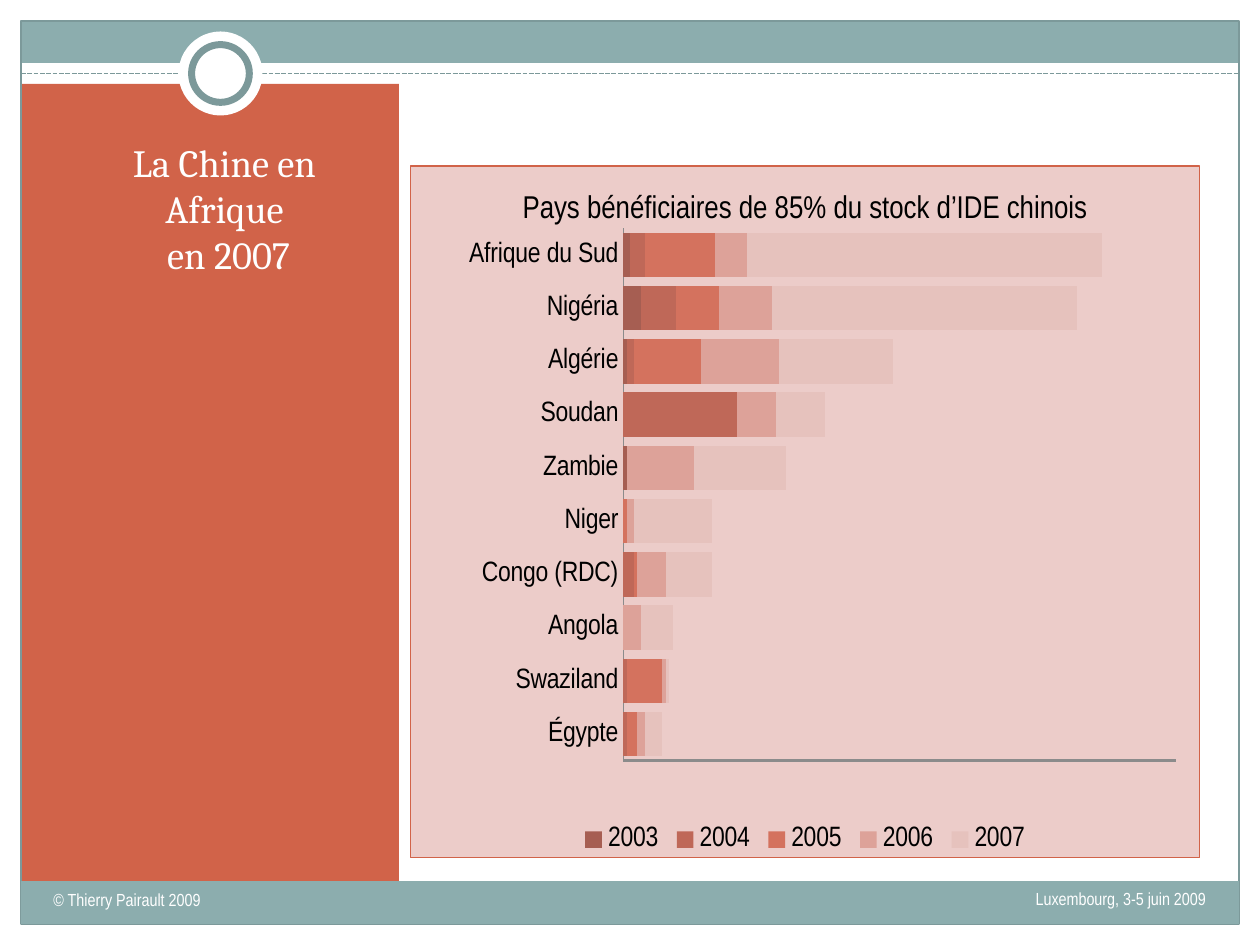
from dataclasses import dataclass

from pptx import Presentation
from pptx.chart.data import CategoryChartData
from pptx.dml.color import RGBColor
from pptx.enum.chart import XL_CHART_TYPE, XL_LEGEND_POSITION, XL_TICK_LABEL_POSITION, XL_TICK_MARK
from pptx.enum.dml import MSO_LINE
from pptx.enum.shapes import MSO_CONNECTOR, MSO_SHAPE
from pptx.enum.text import MSO_ANCHOR, PP_ALIGN
from pptx.oxml import parse_xml
from pptx.oxml.ns import nsdecls, qn
from pptx.util import Pt


@dataclass(frozen=True)
class Theme:
    white: str = "FFFFFF"
    black: str = "000000"
    teal: str = "8CADAE"
    edge: str = "7C999A"
    rust: str = "D16349"
    pink: str = "ECCCC9"
    axis: str = "8B8B8B"
    shades: tuple = ("A65E52", "BF6858", "D4725E", "DDA299", "E6C2BD")
    serif: str = "Cambria"
    sans: str = "Arial Narrow"
    head: int = 22
    title: int = 18
    label: int = 16
    foot: int = 10


THEME = Theme()

LANDS = ["Égypte", "Swaziland", "Angola", "Congo (RDC)", "Niger",
         "Zambie", "Soudan", "Algérie", "Nigéria", "Afrique du Sud"]
STOCK = {
    "2003": [0, 0, 0, 0, 0, 1, 0, 1, 5, 2],
    "2004": [1, 1, 0, 3, 0, 0, 32, 2, 10, 4],
    "2005": [3, 10, 0, 1, 1, 0, 0, 19, 12, 20],
    "2006": [2, 1, 5, 8, 2, 19, 11, 22, 15, 9],
    "2007": [5, 1, 9, 13, 22, 26, 14, 32, 86, 100],
}


def rgb(color):
    return RGBColor.from_string(color)


def style(font, size, color, name):
    font.size, font.name, font.bold = Pt(size), name, False
    font.color.rgb = rgb(color)


def add_form(slide, kind, box, fill=None, line=None, width=0.75):
    form = slide.shapes.add_shape(kind, *map(Pt, box))
    form.shadow.inherit = False
    if fill:
        form.fill.solid()
        form.fill.fore_color.rgb = rgb(fill)
    else:
        form.fill.background()
    if line:
        form.line.color.rgb = rgb(line)
        form.line.width = Pt(width)
    else:
        form.line.fill.background()


def add_disc(slide, x, y, size, **look):
    box = (x - size / 2, y - size / 2, size, size)
    add_form(slide, MSO_SHAPE.OVAL, box, THEME.white, **look)


def add_dash(slide, left, right, y):
    dash = slide.shapes.add_connector(
        MSO_CONNECTOR.STRAIGHT, Pt(left), Pt(y), Pt(right), Pt(y))
    dash.line.color.rgb = rgb(THEME.edge)
    dash.line.width = Pt(0.9)
    dash.line.dash_style = MSO_LINE.SQUARE_DOT
    dash._element.spPr.append(parse_xml(f"<a:effectLst {nsdecls('a')}/>"))


def add_text(slide, box, text, size, name, align, anchor=MSO_ANCHOR.TOP):
    frame = slide.shapes.add_textbox(*map(Pt, box)).text_frame
    frame.word_wrap = True
    frame.vertical_anchor = anchor
    para = frame.paragraphs[0]
    para.text = text
    para.alignment = align
    style(para.font, size, THEME.white, name)


def set_frame(chart):
    space = chart._chartSpace
    space.find(qn("c:chart")).addnext(parse_xml(
        f'<c:spPr {nsdecls("c", "a")}>'
        f'<a:solidFill><a:srgbClr val="{THEME.pink}"/></a:solidFill>'
        f'<a:ln w="{Pt(0.75)}"><a:solidFill><a:srgbClr val="{THEME.rust}"/>'
        '</a:solidFill></a:ln></c:spPr>'))


def set_plot(chart, x, y, w, h):
    area = chart._chartSpace.find(qn("c:chart")).find(qn("c:plotArea"))
    for old in area.findall(qn("c:layout")):
        area.remove(old)
    sizes = "".join(f'<c:{tag} val="{val}"/>' for tag, val in zip("xywh", (x, y, w, h)))
    area.insert(0, parse_xml(
        f'<c:layout {nsdecls("c")}><c:manualLayout>'
        '<c:layoutTarget val="inner"/><c:xMode val="edge"/><c:yMode val="edge"/>'
        f'{sizes}</c:manualLayout></c:layout>'))


def set_axis(axis, width):
    axis.has_major_gridlines = False
    axis.major_tick_mark = axis.minor_tick_mark = XL_TICK_MARK.NONE
    axis.format.line.color.rgb = rgb(THEME.axis)
    axis.format.line.width = Pt(width)
    style(axis.tick_labels.font, THEME.label, THEME.black, THEME.sans)


def add_bars(slide, box):
    data = CategoryChartData(number_format="#,##0")
    data.categories = LANDS
    for year, vals in STOCK.items():
        data.add_series(year, vals)
    chart = slide.shapes.add_chart(XL_CHART_TYPE.BAR_STACKED, *map(Pt, box), data).chart
    style(chart.font, THEME.foot, THEME.black, THEME.serif)

    chart.has_title = True
    para = chart.chart_title.text_frame.paragraphs[0]
    para.text = "Pays bénéficiaires de 85% du stock d’IDE chinois"
    style(para.font, THEME.title, THEME.black, THEME.sans)

    plot = chart.plots[0]
    plot.gap_width, plot.overlap = 20, 100
    plot.vary_by_categories = False
    for bar, shade in zip(plot.series, THEME.shades):
        bar.format.fill.solid()
        bar.format.fill.fore_color.rgb = rgb(shade)

    set_axis(chart.category_axis, 0.75)
    scale = chart.value_axis
    set_axis(scale, 1.5)
    scale.minimum_scale, scale.maximum_scale, scale.major_unit = 0, 156, 22
    scale.tick_label_position = XL_TICK_LABEL_POSITION.NONE

    chart.has_legend = True
    chart.legend.position = XL_LEGEND_POSITION.BOTTOM
    chart.legend.include_in_layout = False
    style(chart.legend.font, THEME.label, THEME.black, THEME.sans)
    set_plot(chart, 0.27, 0.09, 0.7, 0.77)
    set_frame(chart)


def main():
    deck = Presentation()
    deck.slide_width, deck.slide_height = Pt(720), Pt(540)
    slide = deck.slides.add_slide(deck.slide_layouts[6])
    rect = MSO_SHAPE.RECTANGLE

    add_form(slide, rect, (12, 12, 696, 24), THEME.teal)
    add_form(slide, rect, (12, 48, 216, 462), THEME.rust)
    add_form(slide, rect, (12, 12, 696, 516), line=THEME.edge)
    add_dash(slide, 12, 708, 42)
    add_disc(slide, 126, 42, 48)
    add_disc(slide, 126, 42, 33, line=THEME.edge, width=4)
    add_form(slide, rect, (12, 503.5, 696, 24.5), THEME.teal)

    add_text(slide, (35.5, 70.5, 185.5, 91.5), "La Chine en Afrique\v en 2007",
             THEME.head, THEME.serif, PP_ALIGN.CENTER, MSO_ANCHOR.BOTTOM)
    add_text(slide, (456, 504, 240, 29), "Luxembourg, 3-5 juin 2009",
             THEME.foot, THEME.sans, PP_ALIGN.RIGHT)
    add_text(slide, (23.5, 504.5, 266.5, 29), "© Thierry Pairault 2009",
             THEME.foot, THEME.sans, PP_ALIGN.LEFT)
    add_bars(slide, (234, 94.5, 452, 396))
    deck.save("out.pptx")


if __name__ == "__main__":
    main()
